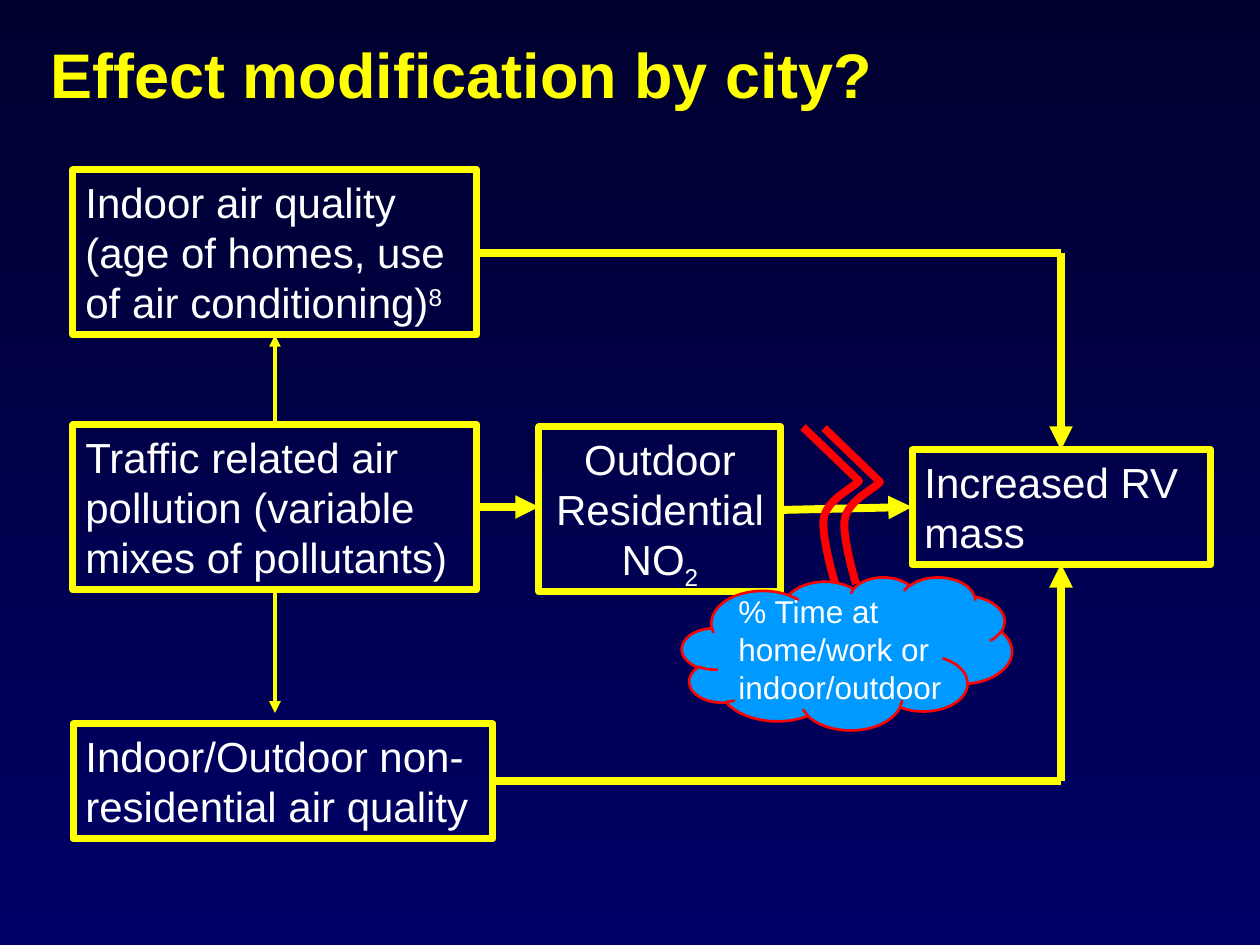
from dataclasses import dataclass

from lxml.etree import SubElement
from pptx import Presentation
from pptx.dml.color import RGBColor
from pptx.enum.shapes import MSO_CONNECTOR, MSO_SHAPE
from pptx.enum.text import MSO_ANCHOR, PP_ALIGN
from pptx.oxml.ns import qn
from pptx.util import Pt

PX = 914400 / 126  # EMU in one px


@dataclass(frozen=True)
class Theme:
    font: str = "Arial"
    top: RGBColor = RGBColor(0x00, 0x00, 0x2F)
    base: RGBColor = RGBColor(0x00, 0x00, 0x66)
    yellow: RGBColor = RGBColor(0xFF, 0xFF, 0x00)
    white: RGBColor = RGBColor(0xFF, 0xFF, 0xFF)
    red: RGBColor = RGBColor(0xFF, 0x00, 0x00)
    blue: RGBColor = RGBColor(0x00, 0x99, 0xFF)
    head: int = 36
    body: int = 24
    note: int = 18


theme = Theme()


def emu(*sizes):
    return [round(size * PX) for size in sizes]


def style(frame, size, color, align=PP_ALIGN.LEFT, bold=False):
    frame.word_wrap = True
    for para in frame.paragraphs:
        para.alignment = align
        for run in para.runs:
            font = run.font
            font.name, font.size, font.bold = theme.font, Pt(size), bold
            font.color.rgb = color


deck = Presentation()
deck.slide_width, deck.slide_height = emu(1260, 945)
slide = deck.slides.add_slide(deck.slide_layouts[5])
shapes = slide.shapes

# Background, dark at the top
back = slide.background.fill
back.gradient()
back.gradient_angle = 270
for stop, color in zip(back.gradient_stops, (theme.top, theme.base)):
    stop.color.rgb = color

# Title
title = shapes.title
title.left, title.top, title.width, title.height = emu(38, 37, 1222, 83)
title.text_frame.text = "Effect modification by city?"
title.text_frame.vertical_anchor = MSO_ANCHOR.MIDDLE
title.text_frame.paragraphs[0].line_spacing = 0.9
style(title.text_frame, theme.head, theme.yellow, bold=True)

# Links: start, end, width in points, arrowhead
mid, end = 275, 1061
links = [
    (781, 510, 912, 507, 4.5, True),
    (477, 507, 539, 507, 4.5, True),
    (477, 253, end, 253, 4.5, False),
    (end, 253, end, 450, 4.5, True),
    (493, 781, end, 781, 4.5, False),
    (end, 781, end, 564, 4.5, True),
    (mid, 425, mid, 335, 2.25, True),
    (mid, 590, mid, 713, 2.25, True),
]
for *ends, width, arrow in links:
    link = shapes.add_connector(MSO_CONNECTOR.STRAIGHT, *emu(*ends))
    link.line.color.rgb = theme.yellow
    link.line.width = Pt(width)
    if arrow:
        SubElement(link.line._get_or_add_ln(), qn("a:tailEnd"), type="triangle")
    SubElement(link._element.spPr, qn("a:effectLst"))

# Boxes: place, text, raised or lowered mark and its baseline, alignment
left, center = PP_ALIGN.LEFT, PP_ALIGN.CENTER
boxes = [
    (73, 170, 404, 165, "Indoor air quality\n(age of homes, use of air conditioning)",
     "8", 30, left),
    (73, 425, 404, 165, "Traffic related air pollution (variable mixes of pollutants)",
     "", 0, left),
    (73, 724, 420, 115, "Indoor/Outdoor non-residential air quality", "", 0, left),
    (539, 427, 242, 165, "Outdoor Residential\nNO", "2", -25, center),
    (912, 450, 299, 115, "Increased RV mass", "", 0, left),
]
for *place, text, mark, shift, align in boxes:
    box = shapes.add_shape(MSO_SHAPE.RECTANGLE, *emu(*place))
    box.shadow.inherit = False
    box.fill.background()
    box.line.color.rgb = theme.yellow
    box.line.width = Pt(4)
    frame = box.text_frame
    frame.text = text
    frame.vertical_anchor = MSO_ANCHOR.TOP
    if mark:
        run = frame.paragraphs[-1].add_run()
        run.text = mark
        run._r.get_or_add_rPr().set("baseline", str(shift * 1000))
    style(frame, theme.body, theme.white, align)

# Break across the arrow: one bent curve, drawn twice
start = (803, 427)
bends = [
    ((859, 481), (853, 488), (828, 499), (824, 517)),
    ((824, 517), (820, 533), (835, 583), (835, 583)),
]
steps = 12
curve = [bends[0][0]]
for a, b, c, d in bends:
    for step in range(1, steps + 1):
        t = step / steps
        u = 1 - t
        curve.append(tuple(
            u**3 * p + 3 * u * u * t * q + 3 * u * t * t * r + t**3 * s
            for p, q, r, s in zip(a, b, c, d)))
for dx, dy in ((0, 0), (21, 1)):
    pen = shapes.build_freeform(*emu(start[0] + dx, start[1] + dy))
    pen.add_line_segments([emu(x + dx, y + dy) for x, y in curve], close=False)
    cut = pen.convert_to_shape()
    cut.shadow.inherit = False
    cut.fill.background()
    cut.line.color.rgb = theme.red
    cut.line.width = Pt(4.5)

# Cloud and its note
cloud = shapes.add_shape(MSO_SHAPE.CLOUD, *emu(682, 577, 330, 153))
cloud.shadow.inherit = False
cloud.fill.solid()
cloud.fill.fore_color.rgb = theme.blue
cloud.line.color.rgb = theme.red
cloud.line.width = Pt(1.5)
note = shapes.add_textbox(*emu(726, 586, 283, 127))
note.text_frame.text = "% Time at home/work or indoor/outdoor"
style(note.text_frame, theme.note, theme.white)

deck.save("out.pptx")
